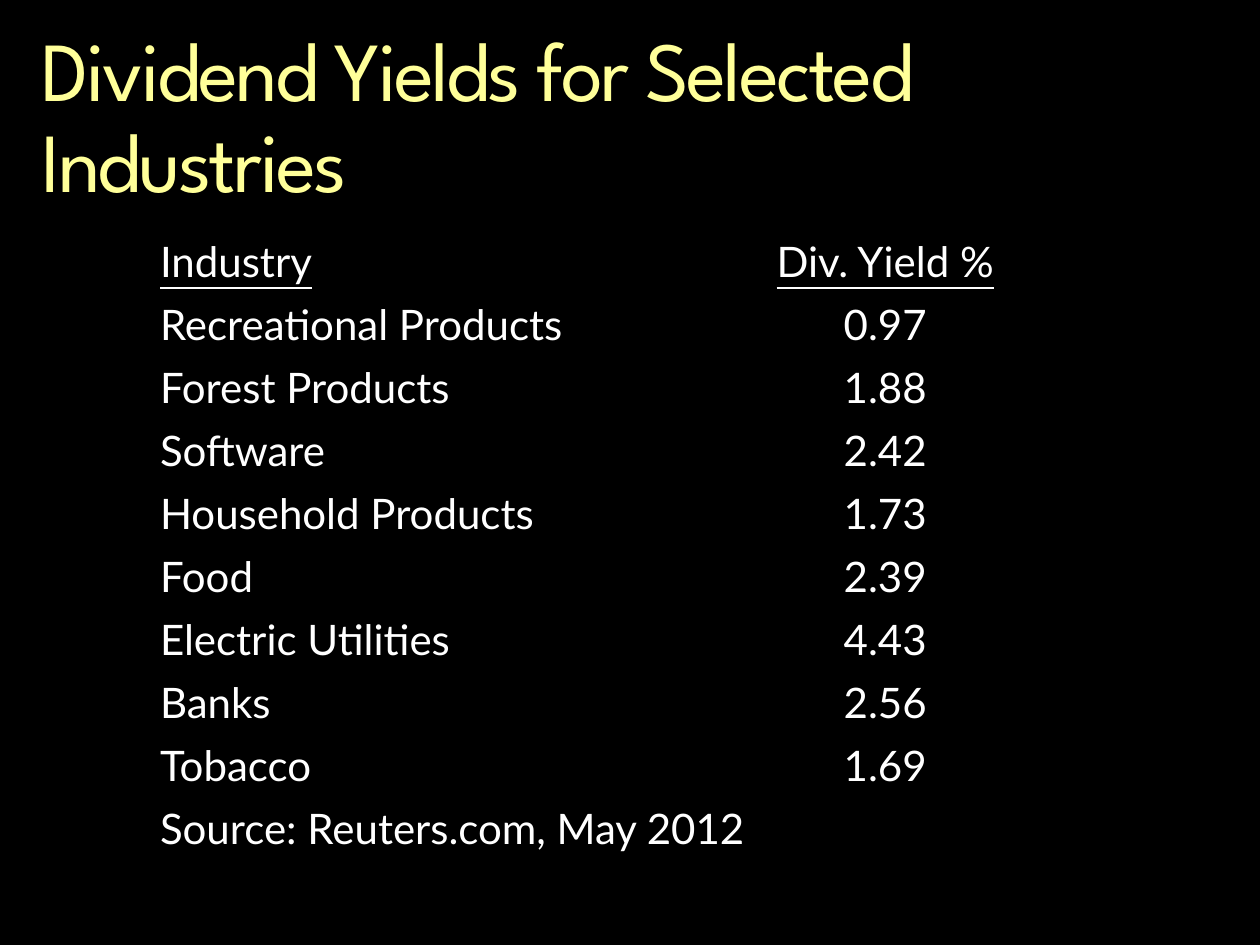
from pptx import Presentation
from pptx.dml.color import RGBColor
from pptx.enum.text import MSO_ANCHOR, PP_ALIGN
from pptx.util import Inches, Pt

PLAIN_TABLE_STYLE = "{2D5ABB26-0587-4C30-8999-92F81FD0307C}"
TITLE_FORMAT = {"name": "League Spartan", "size": Pt(48)}
BODY_FORMAT = {"name": "Lato", "size": Pt(24)}
HEADER_FORMAT = {**BODY_FORMAT, "underline": True}

HEADER = ("Industry", "Div. Yield %")
YIELDS = [
    ("Recreational Products", "0.97"),
    ("Forest Products", "1.88"),
    ("Software", "2.42"),
    ("Household Products", "1.73"),
    ("Food", "2.39"),
    ("Electric Utilities", "4.43"),
    ("Banks", "2.56"),
    ("Tobacco", "1.69"),
]
SOURCE = "Source: Reuters.com, May 2012"
COLUMN_WIDTHS = (4.25, 3.21)
ROW_HEIGHT = 0.5


def color(hex_string):
    return RGBColor.from_string(hex_string)


def write_text(paragraph, text, text_format, hex_string):
    run = paragraph.add_run()
    run.text = text
    for name, value in text_format.items():
        setattr(run.font, name, value)
    run.font.color.rgb = color(hex_string)
    return run


def set_background(slide, hex_string):
    fill = slide.background.fill
    fill.solid()
    fill.fore_color.rgb = color(hex_string)


def add_title(slide, text):
    box = slide.shapes.add_textbox(Inches(0.33), Inches(0.23), Inches(9.45), Inches(1.6))
    frame = box.text_frame
    frame_format = {
        "word_wrap": True,
        "vertical_anchor": MSO_ANCHOR.TOP,
        "margin_left": 0,
        "margin_top": 0,
        "margin_right": 0,
        "margin_bottom": 0,
    }
    for name, value in frame_format.items():
        setattr(frame, name, value)
    paragraph = frame.paragraphs[0]
    paragraph.line_spacing = 0.9
    run = write_text(paragraph, text, TITLE_FORMAT, "FFFF99")
    run.font._element.set("spc", "-150")


def fill_row(table, row_index, texts, text_format):
    alignments = (PP_ALIGN.LEFT, PP_ALIGN.CENTER)
    for column_index, (text, alignment) in enumerate(zip(texts, alignments)):
        cell = table.cell(row_index, column_index)
        paragraph = cell.text_frame.paragraphs[0]
        paragraph.alignment = alignment
        write_text(paragraph, text, text_format, "FFFFFF")


def add_yield_table(slide):
    row_count = len(YIELDS) + 2
    frame = slide.shapes.add_table(
        row_count, len(COLUMN_WIDTHS), Inches(1.17), Inches(1.82),
        Inches(sum(COLUMN_WIDTHS)), Inches(ROW_HEIGHT * row_count),
    )
    table = frame.table
    table.first_row = table.horz_banding = False
    table._tbl.tblPr.find("{*}tableStyleId").text = PLAIN_TABLE_STYLE
    for column, width in zip(table.columns, COLUMN_WIDTHS):
        column.width = Inches(width)
    for cell in table.iter_cells():
        cell.fill.background()

    fill_row(table, 0, HEADER, HEADER_FORMAT)
    for row_index, texts in enumerate(YIELDS, start=1):
        fill_row(table, row_index, texts, BODY_FORMAT)
    last_row = row_count - 1
    table.cell(last_row, 0).merge(table.cell(last_row, 1))
    fill_row(table, last_row, (SOURCE,), BODY_FORMAT)


def main():
    presentation = Presentation()
    presentation.slide_width = Inches(10)
    presentation.slide_height = Inches(7.5)
    slide = presentation.slides.add_slide(presentation.slide_layouts[6])
    set_background(slide, "000000")
    add_title(slide, "Dividend Yields for Selected Industries")
    add_yield_table(slide)
    presentation.save("out.pptx")


if __name__ == "__main__":
    main()
